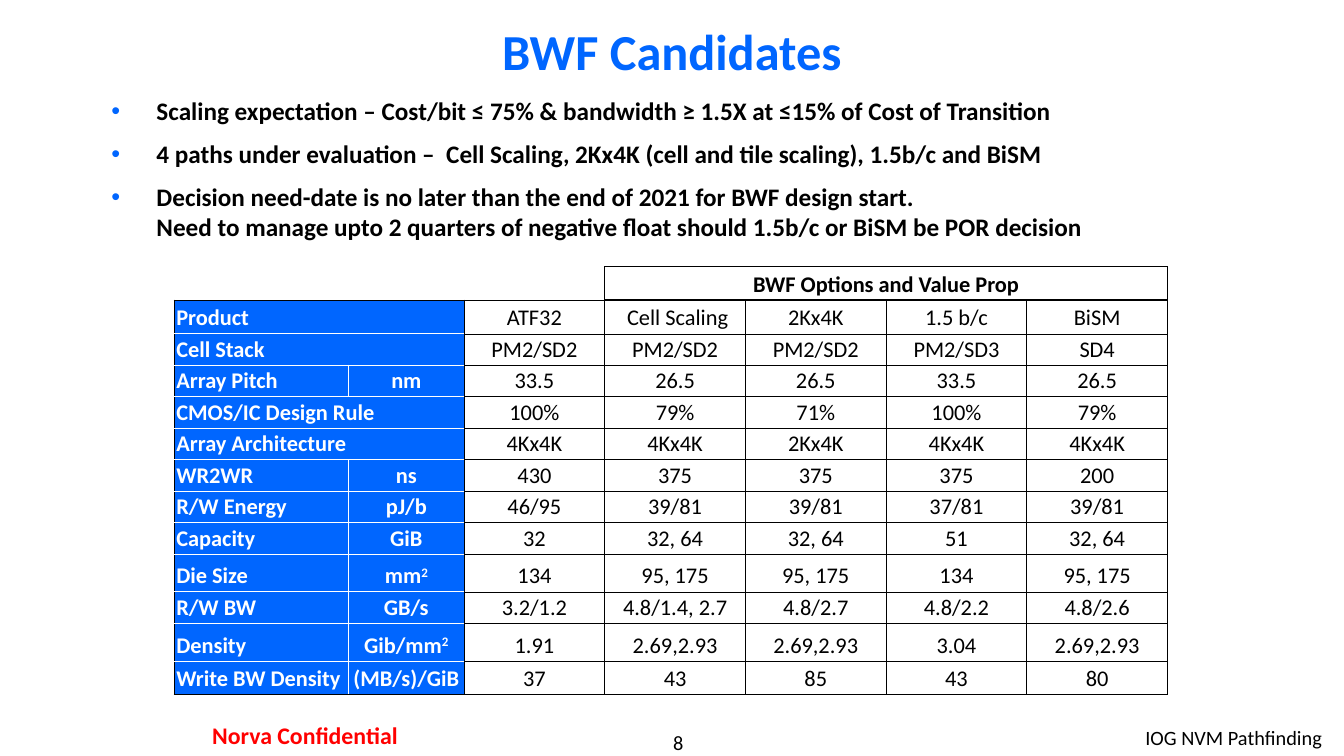
from dataclasses import dataclass

from lxml.etree import SubElement
from pptx import Presentation
from pptx.dml.color import RGBColor
from pptx.enum.text import MSO_ANCHOR, PP_ALIGN
from pptx.oxml.ns import qn
from pptx.util import Emu, Pt


@dataclass(frozen=True)
class Theme:
    font: str = "Calibri"
    blue: str = "0066FF"
    black: str = "000000"
    white: str = "FFFFFF"
    red: str = "FF0000"
    title: float = 36
    bullet: float = 18
    cell: float = 16
    confidential: float = 17
    footer: float = 14.5


@dataclass(frozen=True)
class Box:
    x: int
    y: int
    w: int
    h: int


@dataclass(frozen=True)
class Label:
    text: str
    box: Box
    align: PP_ALIGN
    size: float
    color: str
    bold: bool
    margin_x: int
    margin_y: int


@dataclass(frozen=True)
class Metric:
    """One table row; without a unit the name covers both label columns."""
    name: str
    unit: str | None
    values: tuple[str, ...]
    height: int = 30


@dataclass(frozen=True)
class Edge:
    color: str
    width: float


T = Theme()
THIN, MEDIUM, THICK = (Edge(T.black, w) for w in (0.5, 1, 2))
WHITE_EDGE = Edge(T.white, 1)

TITLE_BOX = Box(96, 16, 1088, 64)
BULLET_BOX = Box(96, 86, 1088, 154)
TABLE_X, TABLE_Y = 166, 254
COLUMNS = [166, 110] + [134] * 5
HEADER_HEIGHT = 32
LABEL_COLUMNS, OPTIONS_COLUMN = 2, 3
CELL_MARGIN = 2
BULLET_INDENT = 43

BULLETS = [
    "Scaling expectation – Cost/bit ≤ 75% & bandwidth ≥ 1.5X at ≤15% of Cost of Transition",
    "4 paths under evaluation –  Cell Scaling, 2Kx4K (cell and tile scaling), 1.5b/c and BiSM",
    "Decision need-date is no later than the end of 2021 for BWF design start.\v"
    "Need to manage upto 2 quarters of negative float should 1.5b/c or BiSM be POR decision",
]
METRICS = [
    Metric("Product", None, ("ATF32", " Cell Scaling", "2Kx4K", "1.5 b/c", "BiSM"), 32),
    Metric("Cell Stack", None, ("PM2/SD2", "PM2/SD2", "PM2/SD2", "PM2/SD3", "SD4")),
    Metric("Array Pitch", "nm", ("33.5", "26.5", "26.5", "33.5", "26.5")),
    Metric("CMOS/IC Design Rule", None, ("100%", "79%", "71%", "100%", "79%")),
    Metric("Array Architecture", None, ("4Kx4K", "4Kx4K", "2Kx4K", "4Kx4K", "4Kx4K")),
    Metric("WR2WR", "ns", ("430", "375", "375", "375", "200")),
    Metric("R/W Energy", "pJ/b", ("46/95", "39/81", "39/81", "37/81", "39/81")),
    Metric("Capacity", "GiB", ("32", "32, 64", "32, 64", "51", "32, 64")),
    Metric("Die Size", "mm^2", ("134", "95, 175", "95, 175", "134", "95, 175"), 36),
    Metric("R/W BW", "GB/s", ("3.2/1.2", "4.8/1.4, 2.7", "4.8/2.7", "4.8/2.2", "4.8/2.6")),
    Metric("Density", "Gib/mm^2", ("1.91", "2.69,2.93", "2.69,2.93", "3.04", "2.69,2.93"), 36),
    Metric("Write BW Density", "(MB/s)/GiB", ("37", "43", "85", "43", "80"), 32),
]
LABELS = [
    Label("8", Box(534, 695, 224, 23), PP_ALIGN.CENTER, T.footer, T.black, False, 0, 0),
    Label("IOG NVM Pathfinding", Box(848, 686, 421, 34), PP_ALIGN.RIGHT,
          T.footer, T.black, False, 10, 5),
    Label("Norva Confidential", Box(149, 680, 283, 39), PP_ALIGN.CENTER,
          T.confidential, T.red, True, 12, 6),
]


def px(n: int) -> Emu:
    return Emu(n * 9525)


def place(sp, box: Box) -> None:
    sp.left, sp.top, sp.width, sp.height = map(px, (box.x, box.y, box.w, box.h))


def style(p, size: float, color: str, bold: bool) -> None:
    for r in p.runs:
        r.font.name, r.font.size, r.font.bold = T.font, Pt(size), bold
        r.font.color.rgb = RGBColor.from_string(color)


def set_margins(target, x: int, y: int) -> None:
    target.margin_left = target.margin_right = px(x)
    target.margin_top = target.margin_bottom = px(y)


def add_text_box(s, box: Box, margin_x: int, margin_y: int):
    tf = s.shapes.add_textbox(*map(px, (box.x, box.y, box.w, box.h))).text_frame
    tf.word_wrap = True
    set_margins(tf, margin_x, margin_y)
    return tf


def add_title(s, text: str) -> None:
    sp = s.shapes.title
    place(sp, TITLE_BOX)
    tf = sp.text_frame
    tf.text = text
    tf.vertical_anchor = MSO_ANCHOR.MIDDLE
    tf.paragraphs[0].alignment = PP_ALIGN.CENTER
    style(tf.paragraphs[0], T.title, T.blue, True)


def add_label(s, label: Label) -> None:
    tf = add_text_box(s, label.box, label.margin_x, label.margin_y)
    tf.text = label.text
    tf.paragraphs[0].alignment = label.align
    style(tf.paragraphs[0], label.size, label.color, label.bold)


def add_bullets(s) -> None:
    tf = add_text_box(s, BULLET_BOX, 10, 5)
    for i, text in enumerate(BULLETS):
        p = tf.add_paragraph() if i else tf.paragraphs[0]
        p.text = text
        pPr = p._p.get_or_add_pPr()
        pPr.set("marL", str(px(BULLET_INDENT)))
        pPr.set("indent", str(px(-BULLET_INDENT)))
        SubElement(SubElement(pPr, qn("a:buClr")), qn("a:srgbClr"), val=T.blue)
        SubElement(pPr, qn("a:buFont"), typeface="Arial")
        SubElement(pPr, qn("a:buChar"), char="•")
        if i:
            p.space_before = Pt(T.bullet / 2)
        style(p, T.bullet, T.black, True)


def vertical_edge(row: int, col: int) -> Edge | None:
    """Line to the left of a column, or to the right of the last one."""
    if row == 0:
        return MEDIUM if col in (OPTIONS_COLUMN, len(COLUMNS)) else None
    if col in (0, len(COLUMNS)):
        return MEDIUM
    return WHITE_EDGE if col < LABEL_COLUMNS else THIN


def horizontal_edge(row: int, col: int) -> Edge | None:
    """Line above a row, or below the last one."""
    if row == 0:
        return MEDIUM if col >= OPTIONS_COLUMN else None
    if row == 1:
        return THICK if col >= OPTIONS_COLUMN else MEDIUM
    if row > len(METRICS):
        return MEDIUM
    return WHITE_EDGE if col < LABEL_COLUMNS else THIN


def draw_borders(cell, row: int, col: int) -> None:
    edges = {
        "a:lnL": None if cell.is_spanned else vertical_edge(row, col),
        "a:lnR": vertical_edge(row, col + cell.span_width),
        "a:lnT": horizontal_edge(row, col),
        "a:lnB": horizontal_edge(row + 1, col),
    }
    tcPr = cell._tc.get_or_add_tcPr()
    for tag, edge in edges.items():
        ln = SubElement(tcPr, qn(tag), w=str(Pt(edge.width) if edge else 0))
        if edge:
            SubElement(SubElement(ln, qn("a:solidFill")), qn("a:srgbClr"), val=edge.color)
        else:
            SubElement(ln, qn("a:noFill"))


def fill_cell(cell, text: str, row: int, col: int) -> None:
    """Write a cell; what follows a ^ is raised."""
    is_label = row > 0 and col < LABEL_COLUMNS
    draw_borders(cell, row, col)
    if is_label:
        cell.fill.solid()
        cell.fill.fore_color.rgb = RGBColor.from_string(T.blue)
    else:
        cell.fill.background()
    set_margins(cell, CELL_MARGIN, CELL_MARGIN)
    cell.vertical_anchor = MSO_ANCHOR.BOTTOM
    p = cell.text_frame.paragraphs[0]
    p.alignment = PP_ALIGN.LEFT if is_label and col == 0 else PP_ALIGN.CENTER
    base, _, raised = text.partition("^")
    if base:
        p.add_run().text = base
    else:
        SubElement(p._p, qn("a:endParaRPr"), sz=str(T.cell * 100))
    if raised:
        r = p.add_run()
        r.text = raised
        r._r.get_or_add_rPr().set("baseline", "30000")
    style(p, T.cell, T.white if is_label else T.black, is_label or row == 0)


def add_candidates_table(s) -> None:
    heights = [HEADER_HEIGHT] + [m.height for m in METRICS]
    table = s.shapes.add_table(len(heights), len(COLUMNS), px(TABLE_X), px(TABLE_Y),
                               px(sum(COLUMNS)), px(sum(heights))).table
    table.first_row = table.horz_banding = False
    for column, width in zip(table.columns, COLUMNS):
        column.width = px(width)
    for row, height in zip(table.rows, heights):
        row.height = px(height)
    table.cell(0, 0).merge(table.cell(0, LABEL_COLUMNS - 1))
    table.cell(0, OPTIONS_COLUMN).merge(table.cell(0, len(COLUMNS) - 1))
    for i, metric in enumerate(METRICS, 1):
        if metric.unit is None:
            table.cell(i, 0).merge(table.cell(i, LABEL_COLUMNS - 1))
    header = ["", "", "", "BWF Options and Value Prop", "", "", ""]
    texts = [header] + [[m.name, m.unit or "", *m.values] for m in METRICS]
    for i, row_texts in enumerate(texts):
        for j, text in enumerate(row_texts):
            fill_cell(table.cell(i, j), text, i, j)


def main() -> None:
    prs = Presentation()
    prs.slide_width, prs.slide_height = px(1280), px(720)
    s = prs.slides.add_slide(prs.slide_layouts.get_by_name("Title Only"))
    for label in LABELS:
        add_label(s, label)
    add_title(s, "BWF Candidates")
    add_bullets(s)
    add_candidates_table(s)
    prs.save("out.pptx")


if __name__ == "__main__":
    main()
